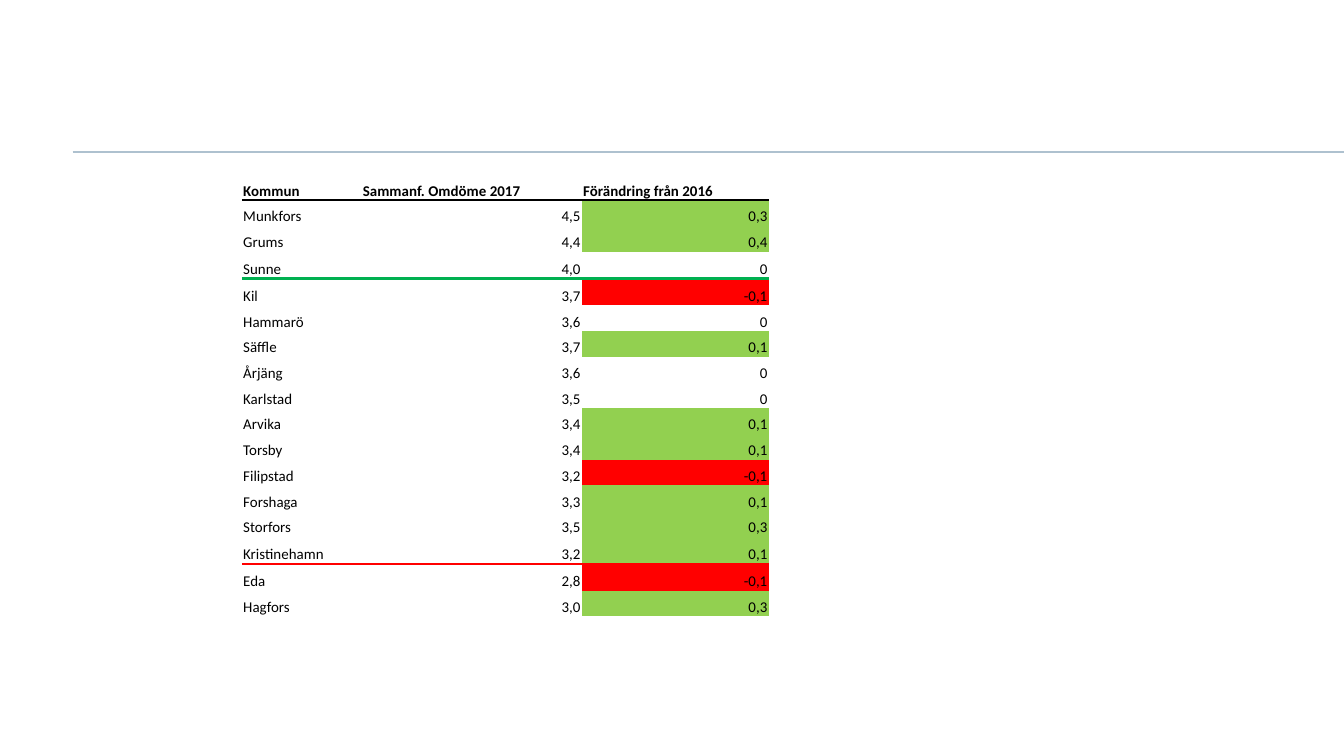
from lxml import etree
from pptx import Presentation
from pptx.dml.color import RGBColor
from pptx.enum.shapes import MSO_CONNECTOR
from pptx.enum.text import MSO_ANCHOR, PP_ALIGN
from pptx.oxml.ns import qn
from pptx.util import Inches, Pt

COLORS = {
    "text": "000000", "rule": "AEC1CF", "up": "92D050", "down": "FF0000",
    "top group": "00B050", "bottom group": "FF0000",
}
FONT = "Calibri"
FONT_SIZE = 8

HEADERS = ("Kommun", "Sammanf. Omdöme 2017", "Förändring från 2016")
RATINGS = [
    ("Munkfors", "4,5", "0,3"),
    ("Grums", "4,4", "0,4"),
    ("Sunne", "4,0", "0"),
    ("Kil", "3,7", "-0,1"),
    ("Hammarö", "3,6", "0"),
    ("Säffle", "3,7", "0,1"),
    ("Årjäng", "3,6", "0"),
    ("Karlstad", "3,5", "0"),
    ("Arvika", "3,4", "0,1"),
    ("Torsby", "3,4", "0,1"),
    ("Filipstad", "3,2", "-0,1"),
    ("Forshaga", "3,3", "0,1"),
    ("Storfors", "3,5", "0,3"),
    ("Kristinehamn", "3,2", "0,1"),
    ("Eda", "2,8", "-0,1"),
    ("Hagfors", "3,0", "0,3"),
]
ROWS = [HEADERS, *RATINGS, ("", "", "")]
# Name above each dividing line: colour and width in points
DIVIDERS = {
    "Kommun": ("text", 1),
    "Sunne": ("top group", 1.5),
    "Kristinehamn": ("bottom group", 1.5),
}

SLIDE_WIDTH = Inches(10)
TABLE_LEFT, TABLE_TOP, TABLE_HEIGHT = 1.8, 1.32, 3.46
COLUMN_WIDTHS = [0.89, 1.64, 1.39, 0.89]
HEADER_HEIGHT, DIVIDER_ROW_HEIGHT = 0.17, 0.2
NO_STYLE = "{2D5ABB26-0587-4C30-8999-92F81FD0307C}"


def color(name):
    return RGBColor.from_string(COLORS[name])


def row_heights():
    """Rows beside a coloured divider are taller; the others share what is left."""
    tall = {index for index, row in enumerate(ROWS)
            if index > 0 and (row[0] in DIVIDERS
                              or index > 1 and ROWS[index - 1][0] in DIVIDERS)}
    plain_count = len(ROWS) - 1 - len(tall)
    plain_height = (TABLE_HEIGHT - HEADER_HEIGHT - DIVIDER_ROW_HEIGHT * len(tall)) / plain_count
    return [HEADER_HEIGHT] + [DIVIDER_ROW_HEIGHT if index in tall else plain_height
                              for index in range(1, len(ROWS))]


def set_borders(cell, top, bottom):
    """Draw the given edges as (colour name, width) and clear the rest."""
    properties = cell._tc.get_or_add_tcPr()
    edges = {"lnL": None, "lnR": None, "lnT": top, "lnB": bottom}
    for position, (side, border) in enumerate(edges.items()):
        line = etree.Element(qn(f"a:{side}"))
        if border:
            color_name, width = border
            line.set("w", str(Pt(width)))
            fill = etree.SubElement(line, qn("a:solidFill"))
            etree.SubElement(fill, qn("a:srgbClr"), val=COLORS[color_name])
            etree.SubElement(line, qn("a:prstDash"), val="solid")
        else:
            etree.SubElement(line, qn("a:noFill"))
        properties.insert(position, line)


def fill_change(cell, change):
    if change != "0":
        cell.fill.solid()
        cell.fill.fore_color.rgb = color("down" if change.startswith("-") else "up")


def write_cell(cell, text, bold, alignment):
    cell.margin_left = cell.margin_right = cell.margin_top = Inches(0.01)
    cell.margin_bottom = 0
    cell.vertical_anchor = MSO_ANCHOR.BOTTOM
    cell.fill.background()
    paragraph = cell.text_frame.paragraphs[0]
    if not text:
        # Small end mark keeps an empty row from growing
        etree.SubElement(paragraph._p, qn("a:endParaRPr"), sz=str(FONT_SIZE * 100))
        return
    paragraph.alignment = alignment
    run = paragraph.add_run()
    run.text = text
    run.font.name = FONT
    run.font.size = Pt(FONT_SIZE)
    run.font.bold = bold
    run.font.color.rgb = color("text")


def add_rule(slide):
    rule = slide.shapes.add_connector(
        MSO_CONNECTOR.STRAIGHT, Inches(0.54), Inches(1.13), SLIDE_WIDTH, Inches(1.13))
    rule.line.color.rgb = color("rule")
    rule.line.width = Pt(1)
    etree.SubElement(rule._element.spPr, qn("a:effectLst"))


def add_ratings_table(slide):
    table = slide.shapes.add_table(
        len(ROWS), len(COLUMN_WIDTHS), Inches(TABLE_LEFT), Inches(TABLE_TOP),
        Inches(sum(COLUMN_WIDTHS)), Inches(TABLE_HEIGHT)).table
    table.first_row = table.horz_banding = False
    table._tbl.tblPr.find(qn("a:tableStyleId")).text = NO_STYLE
    for column, width in zip(table.columns, COLUMN_WIDTHS):
        column.width = Inches(width)

    border_above = None
    for row_index, (values, height) in enumerate(zip(ROWS, row_heights())):
        table.rows[row_index].height = Inches(height)
        is_header = values is HEADERS
        border_below = DIVIDERS.get(values[0])
        for column_index, text in enumerate([*values, ""]):
            cell = table.cell(row_index, column_index)
            is_number = column_index > 0 and not is_header
            write_cell(cell, text, is_header, PP_ALIGN.RIGHT if is_number else PP_ALIGN.LEFT)
            in_list = column_index < len(HEADERS)
            set_borders(cell, border_above if in_list else None,
                        border_below if in_list else None)
        if values in RATINGS:
            fill_change(table.cell(row_index, 2), values[2])
        border_above = border_below


def main():
    presentation = Presentation()
    presentation.slide_width = SLIDE_WIDTH
    presentation.slide_height = SLIDE_WIDTH * 9 // 16
    slide = presentation.slides.add_slide(presentation.slide_layouts[6])
    add_rule(slide)
    add_ratings_table(slide)
    presentation.save("out.pptx")


if __name__ == "__main__":
    main()
